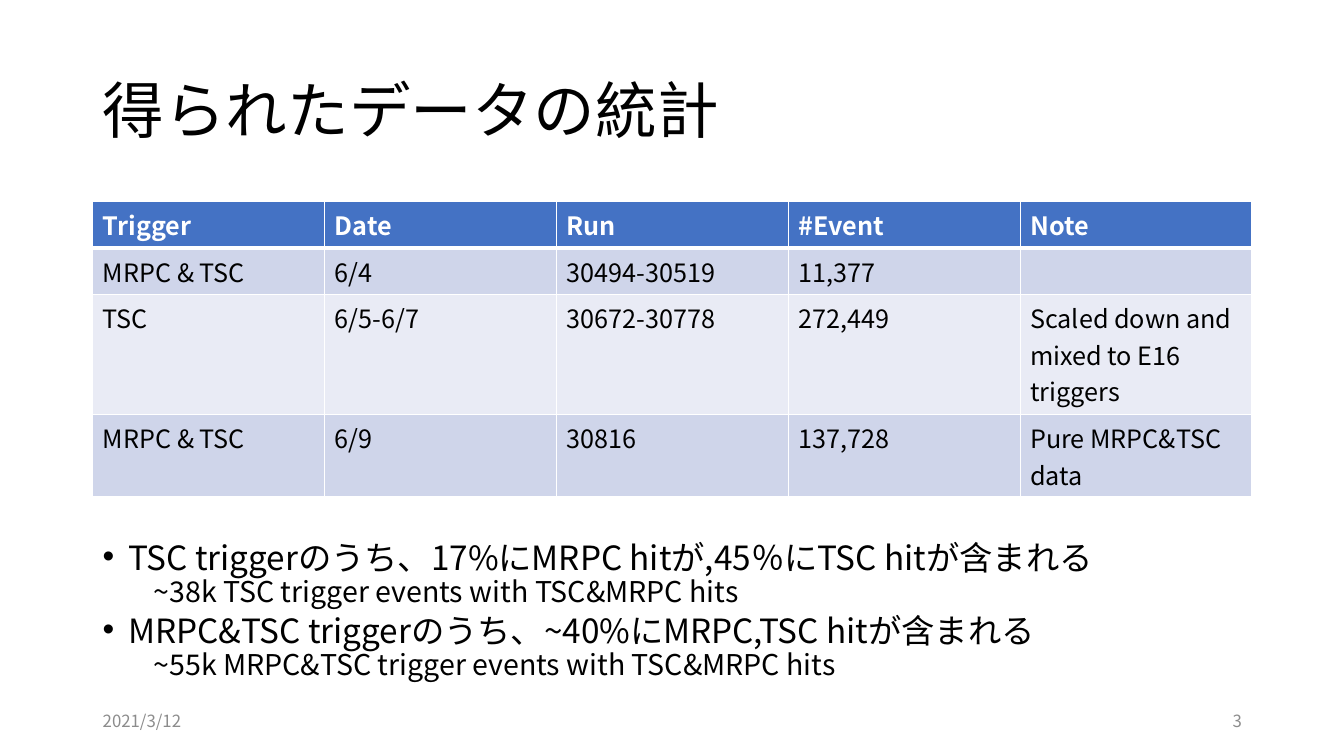
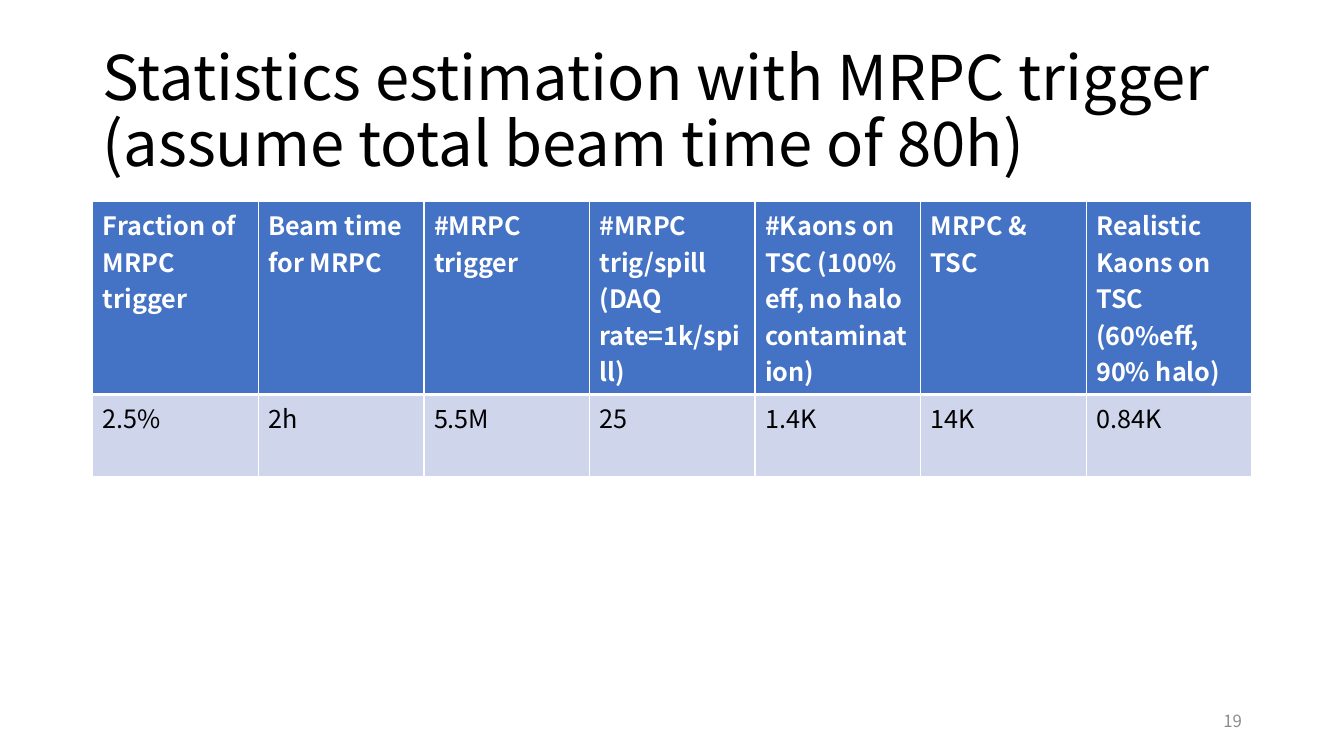
from dataclasses import dataclass
from typing import Any

import lxml.etree
import pptx
import pptx.dml.color
import pptx.enum.text
import pptx.oxml.ns
import pptx.slide
import pptx.table
import pptx.text.text
import pptx.util
from pptx.util import Cm

FONT = "Noto Sans CJK JP"
BLACK, WHITE, GREY = "000000", "FFFFFF", "8C8C8C"
HEADER_FILL = "4472C4"
BAND_FILLS = ("CFD5EA", "E9EBF5")

LEFT, CONTENT_WIDTH = Cm(2.34), Cm(29.21)
FOOTER_TOP, FOOTER_WIDTH, FOOTER_HEIGHT = Cm(17.65), Cm(7.62), Cm(1.02)
TABLE_TOP = Cm(5.08)
INDENT = Cm(0.64)

LEFT_ALIGN = pptx.enum.text.PP_ALIGN.LEFT
RIGHT_ALIGN = pptx.enum.text.PP_ALIGN.RIGHT
TOP = pptx.enum.text.MSO_ANCHOR.TOP
MIDDLE = pptx.enum.text.MSO_ANCHOR.MIDDLE


@dataclass(frozen=True)
class TextStyle:
    size: float
    color: str = BLACK
    bold: bool = False


@dataclass(frozen=True)
class Finding:
    statement: str
    yield_note: str


@dataclass(frozen=True)
class TablePage:
    title: str
    number: int
    rows: list[list[str]]
    row_heights: list[float]
    date: str = ""
    findings: tuple[Finding, ...] = ()


TITLE = TextStyle(44)
FOOTER = TextStyle(12, GREY)
HEADER_CELL = TextStyle(18, WHITE, True)
BODY_CELL = TextStyle(18)
STATEMENT = TextStyle(23.8)
YIELD_NOTE = TextStyle(20.4)

PAGES = [
    TablePage(
        title="得られたデータの統計",
        number=3,
        date="2021/3/12",
        rows=[
            ["Trigger", "Date", "Run", "#Event", "Note"],
            ["MRPC & TSC", "6/4", "30494-30519", "11,377", ""],
            ["TSC", "6/5-6/7", "30672-30778", "272,449",
             "Scaled down and mixed to E16 triggers"],
            ["MRPC & TSC", "6/9", "30816", "137,728", "Pure MRPC&TSC data"],
        ],
        row_heights=[1.17, 1.17, 3.02, 2.07],
        findings=(
            Finding("TSC triggerのうち、17%にMRPC hitが,45％にTSC hitが含まれる",
                    "~38k TSC trigger events with TSC&MRPC hits"),
            Finding("MRPC&TSC triggerのうち、~40%にMRPC,TSC hitが含まれる",
                    "~55k MRPC&TSC trigger events with TSC&MRPC hits"),
        ),
    ),
    TablePage(
        title="Statistics estimation with MRPC trigger\n"
              "(assume total beam time of 80h)",
        number=19,
        rows=[
            ["Fraction of MRPC trigger", "Beam time for MRPC", "#MRPC trigger",
             "#MRPC trig/spill (DAQ rate=1k/spill)",
             "#Kaons on TSC (100% eff, no halo contamination)",
             "MRPC & TSC", "Realistic Kaons on TSC (60%eff, 90% halo)"],
            ["2.5%", "2h", "5.5M", "25", "1.4K", "14K", "0.84K"],
        ],
        row_heights=[4.86, 2.07],
    ),
]


def rgb(color: str) -> pptx.dml.color.RGBColor:
    return pptx.dml.color.RGBColor.from_string(color)


def add_element(parent: Any, tag: str, **attributes: str) -> Any:
    child = lxml.etree.SubElement(parent, pptx.oxml.ns.qn(tag))
    for name, value in attributes.items():
        child.set(name, value)
    return child


def set_attributes(target: Any, values: dict[str, Any]) -> None:
    for name, value in values.items():
        setattr(target, name, value)


def write(para: pptx.text.text._Paragraph, text: str, style: TextStyle,
          **para_format: Any) -> None:
    """Fill a paragraph and style its spans for Latin and East Asian text."""
    para.text = text
    set_attributes(para, para_format)
    for span in para.runs:
        set_attributes(span.font, {"name": FONT, "size": pptx.util.Pt(style.size),
                                   "bold": style.bold})
        span.font.color.rgb = rgb(style.color)
        add_element(span.font._element, "a:ea", typeface=FONT)


def add_box(page: pptx.slide.Slide, left: int, top: int, width: int, height: int,
            anchor: Any = MIDDLE) -> pptx.text.text.TextFrame:
    frame = page.shapes.add_textbox(left, top, width, height).text_frame
    set_attributes(frame, {"word_wrap": True, "vertical_anchor": anchor})
    return frame


def add_footer(page: pptx.slide.Slide, text: str, left: int, alignment: Any) -> None:
    frame = add_box(page, left, FOOTER_TOP, FOOTER_WIDTH, FOOTER_HEIGHT)
    write(frame.paragraphs[0], text, FOOTER, alignment=alignment)


def add_findings(page: pptx.slide.Slide, findings: tuple[Finding, ...]) -> None:
    frame = add_box(page, LEFT, Cm(13.68), Cm(29.8), Cm(3.7), TOP)
    for index, finding in enumerate(findings):
        statement = frame.add_paragraph() if index else frame.paragraphs[0]
        write(statement, finding.statement, STATEMENT,
              line_spacing=0.7, space_before=pptx.util.Pt(10))
        properties = statement._p.get_or_add_pPr()
        properties.set("marL", str(INDENT))
        properties.set("indent", str(-INDENT))
        add_element(properties, "a:buFont", typeface="Arial")
        add_element(properties, "a:buChar", char="•")

        note = frame.add_paragraph()
        write(note, finding.yield_note, YIELD_NOTE,
              line_spacing=0.7, space_before=pptx.util.Pt(5))
        note._p.get_or_add_pPr().set("marL", str(2 * INDENT))


def style_cell(cell: pptx.table._Cell, row: int) -> None:
    """Draw white borders, thick under the header, and the band fill."""
    widths = {"L": 1, "R": 1, "T": 3 if row == 1 else 1, "B": 3 if row == 0 else 1}
    properties = cell._tc.get_or_add_tcPr()
    for side, width in widths.items():
        line = add_element(properties, f"a:ln{side}", w=str(pptx.util.Pt(width)))
        add_element(add_element(line, "a:solidFill"), "a:srgbClr", val=WHITE)
    cell.fill.solid()
    fill = BAND_FILLS[(row - 1) % 2] if row else HEADER_FILL
    cell.fill.fore_color.rgb = rgb(fill)


def add_grid(page: pptx.slide.Slide, rows: list[list[str]],
             row_heights: list[float]) -> None:
    columns = len(rows[0])
    table = page.shapes.add_table(len(rows), columns, LEFT, TABLE_TOP, CONTENT_WIDTH,
                                  Cm(sum(row_heights))).table
    for column in table.columns:
        column.width = CONTENT_WIDTH // columns
    for row, (texts, height) in enumerate(zip(rows, row_heights)):
        table.rows[row].height = Cm(height)
        for column, text in enumerate(texts):
            cell = table.cell(row, column)
            style_cell(cell, row)
            write(cell.text_frame.paragraphs[0], text,
                  BODY_CELL if row else HEADER_CELL)


def add_page(deck: Any, content: TablePage) -> None:
    page = deck.slides.add_slide(deck.slide_layouts[6])
    title = add_box(page, LEFT, Cm(1.02), CONTENT_WIDTH, Cm(3.68))
    write(title.paragraphs[0], content.title, TITLE, line_spacing=0.9)
    add_grid(page, content.rows, content.row_heights)
    if content.findings:
        add_findings(page, content.findings)
    if content.date:
        add_footer(page, content.date, LEFT, LEFT_ALIGN)
    add_footer(page, str(content.number), LEFT + CONTENT_WIDTH - FOOTER_WIDTH,
               RIGHT_ALIGN)


def main() -> None:
    deck = pptx.Presentation()
    set_attributes(deck, {"slide_width": Cm(33.87), "slide_height": Cm(19.05)})
    for content in PAGES:
        add_page(deck, content)
    deck.save("out.pptx")


if __name__ == "__main__":
    main()
